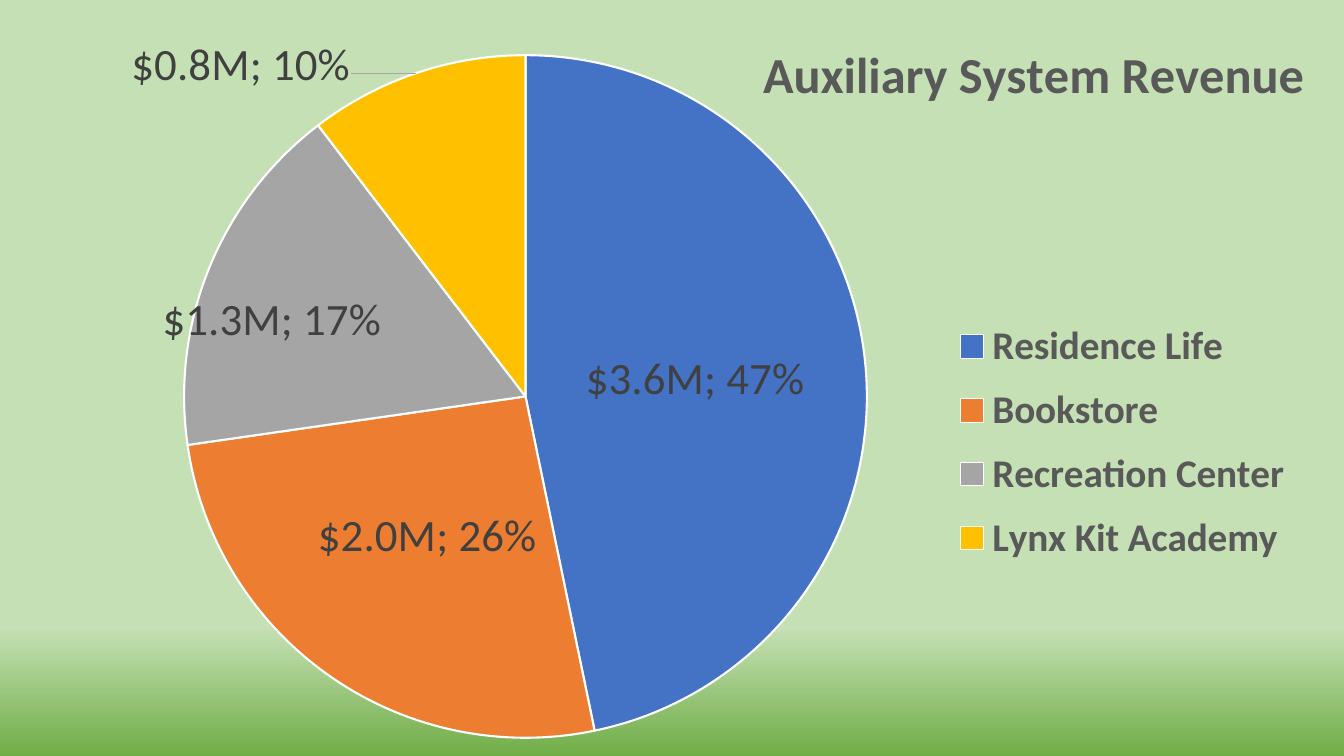
from copy import deepcopy

from lxml import etree
from pptx import Presentation
from pptx.chart.data import CategoryChartData
from pptx.dml.color import RGBColor
from pptx.enum import chart as kinds
from pptx.oxml import ns
from pptx.util import Inches, Pt


def style(font, size, colour, bold=False):
    font.name, font.size, font.bold = "Calibri", Pt(size), bold
    font.color.rgb = RGBColor.from_string(colour)


def place(parent, index, **settings):
    """Insert a manual layout, in fractions of the chart, as a child of parent."""
    for old in parent.findall(ns.qn("c:layout")):
        parent.remove(old)
    layout = etree.Element(ns.qn("c:layout"))
    manual = etree.SubElement(layout, ns.qn("c:manualLayout"))
    for name, value in settings.items():
        etree.SubElement(manual, ns.qn(f"c:{name}")).set("val", str(value))
    parent.insert(index, layout)


deck = Presentation()
deck.slide_width, deck.slide_height = Inches(13.33), Inches(7.5)
page = deck.slides.add_slide(deck.slide_layouts[6])

# Background: light green, darkening at the bottom
fill = page.background.fill
fill.gradient()
fill.gradient_angle = 270
for stop, position, colour in zip(fill.gradient_stops, (0.83, 1), ("C5E0B4", "70AD47")):
    stop.position = position
    stop.color.rgb = RGBColor.from_string(colour)

# Pie chart
slices = [
    ("Residence Life", 3600000, "4472C4"),
    ("Bookstore", 2000000, "ED7D31"),
    ("Recreation Center", 1300000, "A5A5A5"),
    ("Lynx Kit Academy", 800000, "FFC000"),
]
millions = '"$"0.0,,"M"'
data = CategoryChartData(number_format=millions)
data.categories = [name for name, value, colour in slices]
data.add_series("Series 1", [value for name, value, colour in slices])
chart = page.shapes.add_chart(
    kinds.XL_CHART_TYPE.PIE, 0, 0, deck.slide_width, deck.slide_height, data
).chart
style(chart.font, 10, "000000")
plot_area = chart.element.find(".//" + ns.qn("c:plotArea"))
place(plot_area, 0, layoutTarget="inner", xMode="edge", yMode="edge",
      x=0.045, y=0.073, w=0.692, h=0.903)

series = chart.plots[0].series[0]
for number, (name, value, colour) in enumerate(slices):
    look = series.points[number].format
    look.fill.solid()
    look.fill.fore_color.rgb = RGBColor.from_string(colour)
    look.line.color.rgb = RGBColor.from_string("FFFFFF")
    look.line.width = Pt(1.5)

# Title
chart.has_title = True
chart.chart_title.include_in_layout = False
heading = chart.chart_title.text_frame
heading.text = "Auxiliary System Revenue"
style(heading.paragraphs[0].font, 36, "595959", True)
place(chart.chart_title._element, 1, xMode="edge", yMode="edge", x=0.561, y=0.04)

# Legend
chart.has_legend = True
legend = chart.legend
legend.position = kinds.XL_LEGEND_POSITION.RIGHT
legend.include_in_layout = False
style(legend.font, 28, "595959", True)
place(legend._element, 1, xMode="edge", yMode="edge", x=0.7, y=0.405, w=0.27, h=0.36)

# Labels: value and share, centred on the slices
labels = series.data_labels
labels.number_format = millions
labels.number_format_is_linked = True
labels.show_value = labels.show_percentage = True
labels.position = kinds.XL_LABEL_POSITION.CENTER
style(labels.font, 32, "404040")
group = labels._element
separator = etree.Element(ns.qn("c:separator"))
separator.text = "; "
group.find(ns.qn("c:showBubbleSize")).addnext(separator)

# The two smallest slices have their labels moved to the left
shared = [part for part in group if part.tag != ns.qn("c:showLeaderLines")]
for order, (number, x, y) in enumerate([(2, -0.071, -0.016), (3, -0.171, -0.224)]):
    label = etree.Element(ns.qn("c:dLbl"))
    etree.SubElement(label, ns.qn("c:idx")).set("val", str(number))
    label.extend(deepcopy(part) for part in shared)
    place(label, 1, x=x, y=y)
    group.insert(order, label)

# Thin grey leader line
leader = etree.SubElement(group, ns.qn("c:leaderLines"))
line = etree.SubElement(etree.SubElement(leader, ns.qn("c:spPr")), ns.qn("a:ln"), w="9525")
paint = etree.SubElement(line, ns.qn("a:solidFill"))
etree.SubElement(paint, ns.qn("a:srgbClr")).set("val", "A6A6A6")

deck.save("out.pptx")
